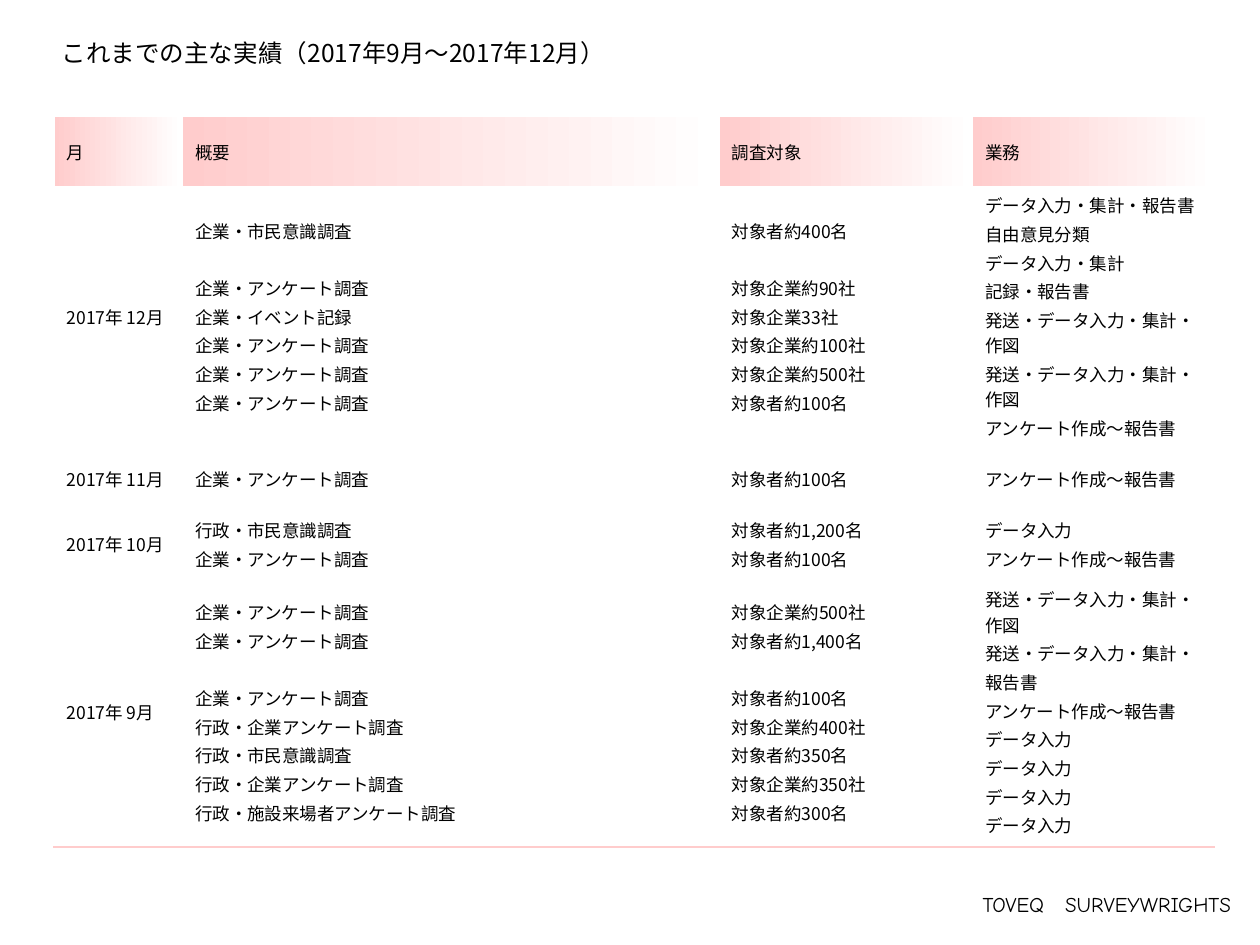
"""Build a slide that lists survey projects by month in a ruled table."""
from dataclasses import dataclass
from typing import Sequence

from lxml import etree
from pptx import Presentation
from pptx import util as u
from pptx.dml.color import RGBColor
from pptx.enum import text
from pptx.oxml import ns

SLIDE_WIDTH, SLIDE_HEIGHT = u.Inches(10), u.Inches(7.5)
GRID = SLIDE_WIDTH / 100


@dataclass(frozen=True)
class Theme:
    ink: str = "000000"
    rose: str = "FFCCCC"
    paper: str = "FFFFFF"
    font: str = "Noto Sans CJK JP"
    footer_font: str = "Comic Neue"
    title_size: float = 14
    table_size: float = 10
    footer_size: float = 12
    line_width: float = 1
    spacing: float = 1
    group_gap: float = 17.5


@dataclass(frozen=True)
class Box:
    column: float
    row: float
    columns: float
    rows: float

    def lengths(self) -> list[int]:
        return [cells(n) for n in (self.column, self.row, self.columns, self.rows)]


@dataclass(frozen=True)
class Period:
    month: str
    surveys: Sequence[tuple[str, str]]
    tasks: Sequence[str]
    rows: float
    gap_before: int = 0


THEME = Theme()
TITLE_BOX = Box(3.9, 2.2, 92.1, 3.9)
TABLE_BOX = Box(4.3, 9.3, 92.1, 52.2)
FOOTER_BOX = Box(64.1, 70.6, 34.6, 2.7)
COLUMNS = (10.2, 42.6, 20.1, 19.2)
HEADER_ROWS = 5.5
HEADINGS = ("月", "概要", "調査対象", "業務")

COMPANY = "企業・アンケート調査"
CITIZEN = "行政・市民意識調査"
PUBLIC = "行政・企業アンケート調査"
FULL = "アンケート作成～報告書"
MAILING = "発送・データ入力・集計・"
ENTRY = "データ入力"

PERIODS = (
    Period(
        "2017年 12月",
        (
            ("企業・市民意識調査", "対象者約400名"),
            (COMPANY, "対象企業約90社"),
            ("企業・イベント記録", "対象企業33社"),
            (COMPANY, "対象企業約100社"),
            (COMPANY, "対象企業約500社"),
            (COMPANY, "対象者約100名"),
        ),
        ("データ入力・集計・報告書", "自由意見分類", "データ入力・集計", "記録・報告書",
         MAILING + "作図", MAILING + "作図", FULL),
        15.3,
        gap_before=1,
    ),
    Period("2017年 11月", ((COMPANY, "対象者約100名"),), (FULL,), 5.1),
    Period(
        "2017年 10月",
        ((CITIZEN, "対象者約1,200名"), (COMPANY, "対象者約100名")),
        (ENTRY, FULL),
        4.9,
    ),
    Period(
        "2017年 9月",
        (
            (COMPANY, "対象企業約500社"),
            (COMPANY, "対象者約1,400名"),
            (COMPANY, "対象者約100名"),
            (PUBLIC, "対象企業約400社"),
            (CITIZEN, "対象者約350名"),
            (PUBLIC, "対象企業約350社"),
            ("行政・施設来場者アンケート調査", "対象者約300名"),
        ),
        (MAILING + "作図", MAILING, "報告書", FULL, *[ENTRY] * 4),
        21.4,
        gap_before=2,
    ),
)


def cells(count: float) -> int:
    return round(count * GRID)


def place(shape, box: Box) -> None:
    shape.left, shape.top, shape.width, shape.height = box.lengths()


def style(paragraph, size: float, name: str = THEME.font) -> None:
    font = paragraph.font
    font.size = u.Pt(size)
    font.bold = False
    font.color.rgb = RGBColor.from_string(THEME.ink)
    font.name = name
    etree.SubElement(font._element, ns.qn("a:ea"), typeface=name)


def set_borders(cell, bottom: str) -> None:
    properties = cell._tc.get_or_add_tcPr()
    sides = {"lnL": THEME.paper, "lnR": THEME.paper, "lnT": None, "lnB": bottom}
    for position, (side, color) in enumerate(sides.items()):
        line = etree.Element(ns.qn(f"a:{side}"), w=str(u.Pt(THEME.line_width)))
        if color:
            fill = etree.SubElement(line, ns.qn("a:solidFill"))
            etree.SubElement(fill, ns.qn("a:srgbClr"), val=color)
        else:
            etree.SubElement(line, ns.qn("a:noFill"))
        properties.insert(position, line)


def write_cell(cell, lines: Sequence[str], gap_before: int = 0) -> None:
    cell.vertical_anchor = text.MSO_ANCHOR.MIDDLE
    frame = cell.text_frame
    frame.text = "\n".join(lines)
    for index, paragraph in enumerate(frame.paragraphs):
        if index:
            gap = THEME.group_gap if index == gap_before else THEME.spacing
            paragraph.space_before = u.Pt(gap)
        paragraph.space_after = u.Pt(THEME.spacing)
        style(paragraph, THEME.table_size)


def add_title(slide) -> None:
    title = slide.shapes.title
    place(title, TITLE_BOX)
    frame = title.text_frame
    frame.text = "これまでの主な実績（2017年9月～2017年12月）"
    frame.vertical_anchor = text.MSO_ANCHOR.MIDDLE
    paragraph = frame.paragraphs[0]
    paragraph.alignment = text.PP_ALIGN.LEFT
    style(paragraph, THEME.title_size)


def add_results(slide) -> None:
    shape = slide.shapes.add_table(len(PERIODS) + 1, len(COLUMNS), *TABLE_BOX.lengths())
    table = shape.table
    table.first_row = table.horz_banding = False
    for column, width in zip(table.columns, COLUMNS):
        column.width = cells(width)
    heights = (HEADER_ROWS, *(period.rows for period in PERIODS))
    for row, height in zip(table.rows, heights):
        row.height = cells(height)

    for cell, heading in zip(table.rows[0].cells, HEADINGS):
        write_cell(cell, [heading])
        cell.fill.gradient()
        cell.fill.gradient_angle = 0
        for stop, color in zip(cell.fill.gradient_stops, (THEME.rose, THEME.paper)):
            stop.color.rgb = RGBColor.from_string(color)
        set_borders(cell, THEME.paper)

    for row, period in zip(list(table.rows)[1:], PERIODS):
        summaries, targets = zip(*period.surveys)
        contents = (
            ([period.month], 0),
            (summaries, period.gap_before),
            (targets, period.gap_before),
            (period.tasks, 0),
        )
        for cell, (lines, gap_before) in zip(row.cells, contents):
            write_cell(cell, lines, gap_before)
            cell.fill.background()
            set_borders(cell, THEME.rose)


def add_footer(slide) -> None:
    frame = slide.shapes.add_textbox(*FOOTER_BOX.lengths()).text_frame
    frame.word_wrap = True
    frame.auto_size = text.MSO_AUTO_SIZE.SHAPE_TO_FIT_TEXT
    frame.text = "TOVEQ　SURVEYWRIGHTS"
    paragraph = frame.paragraphs[0]
    paragraph.alignment = text.PP_ALIGN.RIGHT
    paragraph.line_spacing = 0.85
    style(paragraph, THEME.footer_size, THEME.footer_font)


def main() -> None:
    presentation = Presentation()
    presentation.slide_width, presentation.slide_height = SLIDE_WIDTH, SLIDE_HEIGHT
    slide = presentation.slides.add_slide(presentation.slide_layouts[5])
    add_title(slide)
    add_results(slide)
    add_footer(slide)
    presentation.save("out.pptx")


if __name__ == "__main__":
    main()
